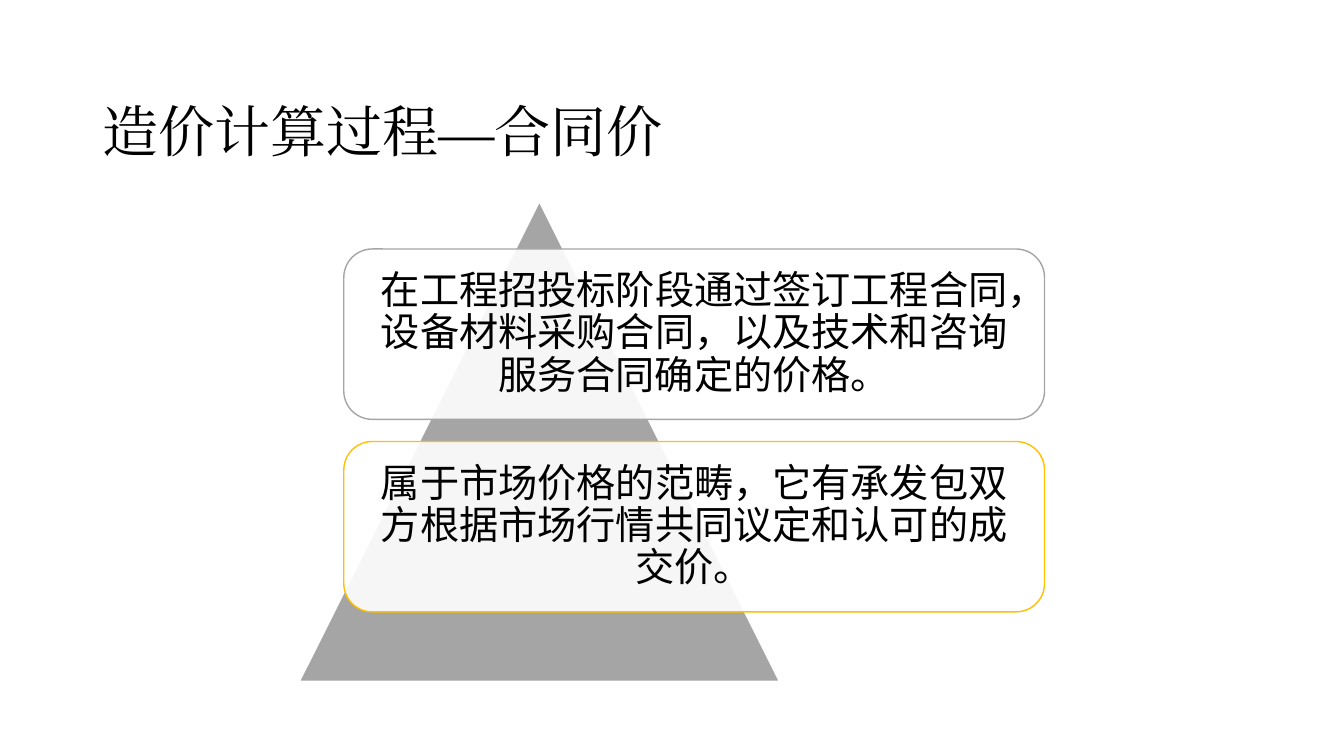
"""Build the contract price slide: a title and two cards over a triangle."""
from lxml.etree import SubElement
from pptx import Presentation
from pptx.dml.color import RGBColor
from pptx.enum.shapes import MSO_SHAPE as Shape
from pptx.enum.text import MSO_ANCHOR as Anchor, PP_ALIGN as Align
from pptx.oxml.ns import qn
from pptx.util import Pt

PX = 9144
BLACK = RGBColor(0x00, 0x00, 0x00)
WHITE = RGBColor(0xFF, 0xFF, 0xFF)
GRAY = RGBColor(0xA5, 0xA5, 0xA5)
GOLD = RGBColor(0xFF, 0xC0, 0x00)
TITLE_FONT = "Times New Roman"
BODY_FONT = "Noto Sans CJK SC"

TITLE = "造价计算过程—合同价"
CARDS = [
    ("在工程招投标阶段通过签订工程合同，设备材料采购合同，以及技术和咨询服务合同确定的价格。", GRAY),
    ("属于市场价格的范畴，它有承发包双方根据市场行情共同议定和认可的成交价。", GOLD),
]
TITLE_BOX = (92, 40, 1150, 145)
TRIANGLE_BOX = (297, 200, 476, 476)
CARD_LEFT, CARD_TOP, CARD_WIDTH, CARD_HEIGHT = 341, 247, 695, 169
CARD_STEP = 191
CARD_INSET = 12
CARD_OPACITY = 90


def to_emu(box):
    return [length * PX for length in box]


def add_panel(slide, kind, box, fill, line):
    shape = slide.shapes.add_shape(kind, *to_emu(box))
    shape.shadow.inherit = False
    shape.fill.solid()
    shape.fill.fore_color.rgb = fill
    shape.line.color.rgb = line
    shape.line.width = Pt(1)
    return shape


def set_opacity(shape, percent):
    color = shape.fill._xPr.find(qn("a:solidFill"))[0]
    SubElement(color, qn("a:alpha"), val=str(percent * 1000))


def write_text(shape, text, *, font, size, align, spacing, inset=None):
    frame = shape.text_frame
    frame.word_wrap = True
    frame.vertical_anchor = Anchor.MIDDLE
    if inset is not None:
        frame.margin_left = frame.margin_right = inset * PX
        frame.margin_top = frame.margin_bottom = inset * PX
    paragraph = frame.paragraphs[0]
    paragraph.alignment = align
    paragraph.line_spacing = spacing
    run = paragraph.add_run()
    run.text = text
    run.font.size = Pt(size)
    run.font.name = font
    run.font.color.rgb = BLACK
    SubElement(run.font._element, qn("a:ea"), typeface=font)


def main():
    presentation = Presentation()
    presentation.slide_width = 1333 * PX
    presentation.slide_height = 750 * PX
    slide = presentation.slides.add_slide(presentation.slide_layouts[6])

    title = slide.shapes.add_textbox(*to_emu(TITLE_BOX))
    write_text(title, TITLE, font=TITLE_FONT, size=40, align=Align.LEFT, spacing=1.5)

    add_panel(slide, Shape.ISOSCELES_TRIANGLE, TRIANGLE_BOX, GRAY, WHITE)
    for index, (text, outline) in enumerate(CARDS):
        box = (CARD_LEFT, CARD_TOP + index * CARD_STEP, CARD_WIDTH, CARD_HEIGHT)
        card = add_panel(slide, Shape.ROUNDED_RECTANGLE, box, WHITE, outline)
        set_opacity(card, CARD_OPACITY)
        write_text(card, text, font=BODY_FONT, size=28, align=Align.CENTER,
                   spacing=0.9, inset=CARD_INSET)

    presentation.save("out.pptx")


if __name__ == "__main__":
    main()
